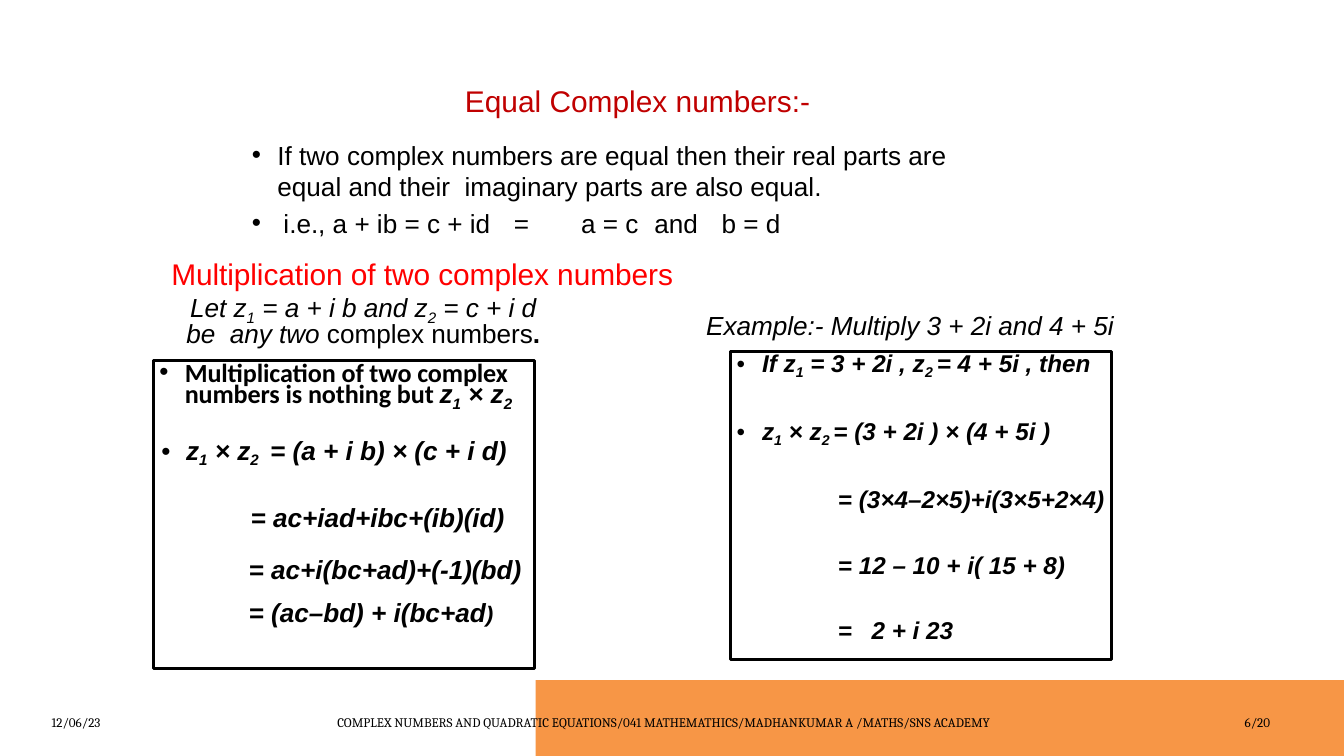
from dataclasses import dataclass, replace
from typing import Optional

from lxml import etree
from pptx import Presentation
from pptx.dml.color import RGBColor
from pptx.enum import shapes, text
from pptx.oxml.ns import qn
from pptx.util import Inches, Pt

COLORS = {"ink": "000000", "title": "C00000", "subtitle": "FF0000", "band": "F79646"}
LEFT, CENTER, RIGHT = text.PP_ALIGN.LEFT, text.PP_ALIGN.CENTER, text.PP_ALIGN.RIGHT


@dataclass(frozen=True)
class Style:
    size: float
    font: str = "Arial"
    color: str = "ink"
    bold: bool = False
    italic: bool = False
    spacing: float = 0


@dataclass(frozen=True)
class Run:
    text: str
    style: Style
    subscript: bool = False


@dataclass(frozen=True)
class Line:
    runs: tuple[Run, ...]
    align: text.PP_ALIGN = LEFT
    indent: float = 0
    hanging: float = 0
    before: float = 0
    exact: Optional[float] = None
    tabs: tuple[float, ...] = ()


@dataclass(frozen=True)
class Area:
    left: float
    top: float
    width: float
    height: float

    def lengths(self) -> list[int]:
        return [Inches(v) for v in (self.left, self.top, self.width, self.height)]


def rgb(name: str) -> RGBColor:
    return RGBColor.from_string(COLORS[name])


def math_runs(formula: str, style: Style) -> tuple[Run, ...]:
    """Split a formula at "|"; every second piece is a subscript."""
    return tuple(Run(piece, style, i % 2 == 1)
                 for i, piece in enumerate(formula.split("|")) if piece)


def set_bullet_and_tabs(paragraph, line: Line) -> None:
    props = paragraph._p.get_or_add_pPr()
    props.set("marL", str(Inches(line.indent)))
    props.set("indent", str(Inches(-line.hanging)))
    if line.hanging:
        color = etree.SubElement(props, qn("a:buClr"))
        etree.SubElement(color, qn("a:srgbClr"), val=COLORS["ink"])
        etree.SubElement(props, qn("a:buFont"), typeface="Arial")
        etree.SubElement(props, qn("a:buChar"), char="•")
    if line.tabs:
        stops = etree.SubElement(props, qn("a:tabLst"))
        for stop in line.tabs:
            etree.SubElement(stops, qn("a:tab"), pos=str(Inches(stop)), algn="l")


def write(frame, lines: list[Line]) -> None:
    for i, line in enumerate(lines):
        paragraph = frame.add_paragraph() if i else frame.paragraphs[0]
        set_bullet_and_tabs(paragraph, line)
        paragraph.alignment = line.align
        if line.before:
            paragraph.space_before = Pt(line.before)
        if line.exact:
            paragraph.line_spacing = Pt(line.exact)
        for part in line.runs:
            run = paragraph.add_run()
            run.text = part.text
            font, style = run.font, part.style
            font.name, font.size = style.font, Pt(style.size)
            font.bold, font.italic = style.bold, style.italic
            font.color.rgb = rgb(style.color)
            props = font._element
            props.set("spc", str(round(style.spacing * 100)))
            if part.subscript:
                props.set("baseline", "-21000")


def add_text(slide, area: Area, lines: list[Line], wrap: bool = True,
             middle: bool = False) -> None:
    frame = slide.shapes.add_textbox(*area.lengths()).text_frame
    frame.word_wrap = wrap
    if middle:
        frame.vertical_anchor = text.MSO_ANCHOR.MIDDLE
    else:
        frame.auto_size = text.MSO_AUTO_SIZE.SHAPE_TO_FIT_TEXT
    write(frame, lines)


def add_rectangle(slide, area: Area):
    shape = slide.shapes.add_shape(shapes.MSO_SHAPE.RECTANGLE, *area.lengths())
    shape.shadow.inherit = False
    return shape


def add_worked_box(slide, area: Area, lines: list[Line], top_inset: float) -> None:
    box = add_rectangle(slide, area)
    box.fill.background()
    box.line.color.rgb = rgb("ink")
    box.line.width = Pt(3)
    frame = box.text_frame
    frame.word_wrap = True
    frame.vertical_anchor = text.MSO_ANCHOR.TOP
    frame.margin_left = frame.margin_right = frame.margin_bottom = 0
    frame.margin_top = Inches(top_inset)
    write(frame, lines)


def add_footer(slide) -> None:
    band = add_rectangle(slide, Area(7.97, 10.12, 12.03, 1.13))
    band.fill.solid()
    band.fill.fore_color.rgb = rgb("band")
    band.line.fill.background()
    small = Style(14, "Cambria")
    course = ("COMPLEX NUMBERS AND QUADRATIC EQUATIONS/041 MATHEMATHICS/"
              "MADHANKUMAR A /MATHS/SNS ACADEMY")
    for left, width, align, words in ((0.67, 2.33, LEFT, "12/06/23"),
                                      (16.67, 2.33, RIGHT, "6/20"),
                                      (3.42, 12.92, CENTER, course)):
        add_text(slide, Area(left, 10.55, width, 0.4),
                 [Line((Run(words, small),), align)], middle=True)


def main() -> None:
    deck = Presentation()
    deck.slide_width, deck.slide_height = Inches(20), Inches(11.25)
    slide = deck.slides.add_slide(deck.slide_layouts[6])
    add_footer(slide)

    body = Style(28)
    slanted = replace(body, italic=True)
    strong = replace(slanted, bold=True)
    lead = replace(body, font="Calibri", bold=True, spacing=-0.1)
    example = replace(strong, size=26)
    title = Style(32, color="title")
    subtitle = Style(32, color="subtitle", spacing=-0.1)

    add_text(slide, Area(6.82, 1.18, 5.37, 0.64),
             [Line((Run("Equal Complex numbers:-", title),))], wrap=False)
    add_text(slide, Area(3.64, 2.02, 11.2, 1.6), [
        Line((Run("If two complex numbers are equal then their real parts are "
                  "equal and their  imaginary parts are also equal.", body),),
             indent=0.39, hanging=0.38, tabs=(0.39,)),
        Line((Run("i.e., a + ib = c + id\t=\ta = c\tand\tb = d", body),),
             indent=0.48, hanging=0.47, before=5.8,
             tabs=(0.48, 3.4, 3.91, 4.91, 5.65)),
    ])
    add_text(slide, Area(2.45, 3.75, 7.68, 0.64),
             [Line((Run("Multiplication of two complex numbers", subtitle),))],
             wrap=False)
    definition = math_runs("Let z|1| = a + i b and z|2| = c + i d be  any two ", slanted)
    add_text(slide, Area(2.55, 4.47, 5.67, 0.77), [
        Line(definition + (Run("complex numbers", body),
                           Run(".", replace(body, bold=True))),
             CENTER, indent=0.04, exact=24)])
    add_text(slide, Area(10.41, 4.55, 6.34, 0.57),
             [Line((Run("Example:- Multiply 3 + 2i and 4 + 5i", slanted),))],
             wrap=False)

    intro = Run("Multiplication of two complex  numbers is nothing but ", lead)
    add_worked_box(slide, Area(2.28, 5.36, 5.68, 4.59), [
        Line((intro,) + math_runs("z|1| × z|2", strong),
             indent=0.47, hanging=0.38, exact=26.9),
        Line(math_runs("z|1| × z|2 | = (a + i b) × (c + i d)", strong),
             indent=0.49, hanging=0.37, before=23),
        Line((Run("= ac+iad+ibc+(ib)(id)", strong),), indent=1.45, before=35.2),
        Line((Run("= ac+i(bc+ad)+(-1)(bd)", strong),), indent=1.42, before=22),
        Line((Run("= (ac–bd) + i(bc+ad", strong),
              Run(")", replace(strong, size=24))), indent=1.42, before=12.3),
    ], top_inset=0.03)

    gap = 38.7
    steps = [Line((Run(step, example),), indent=1.6, before=gap, tabs=(3.62,))
             for step in ("= (3×4–2×5)+i(3×5+2×4)", "= 12 – 10 + i( 15 + 8)",
                          "=\t2 + i 23")]
    add_worked_box(slide, Area(10.87, 5.23, 5.67, 4.59), [
        Line(math_runs("If z|1| = 3 + 2i , z|2 |= 4 + 5i , then", example),
             indent=0.47, hanging=0.38, exact=30.9),
        Line(math_runs("z|1| × z|2 |= (3 + 2i ) × (4 + 5i )", example),
             indent=0.47, hanging=0.38, before=gap),
        *steps,
    ], top_inset=0)

    deck.save("out.pptx")


if __name__ == "__main__":
    main()
